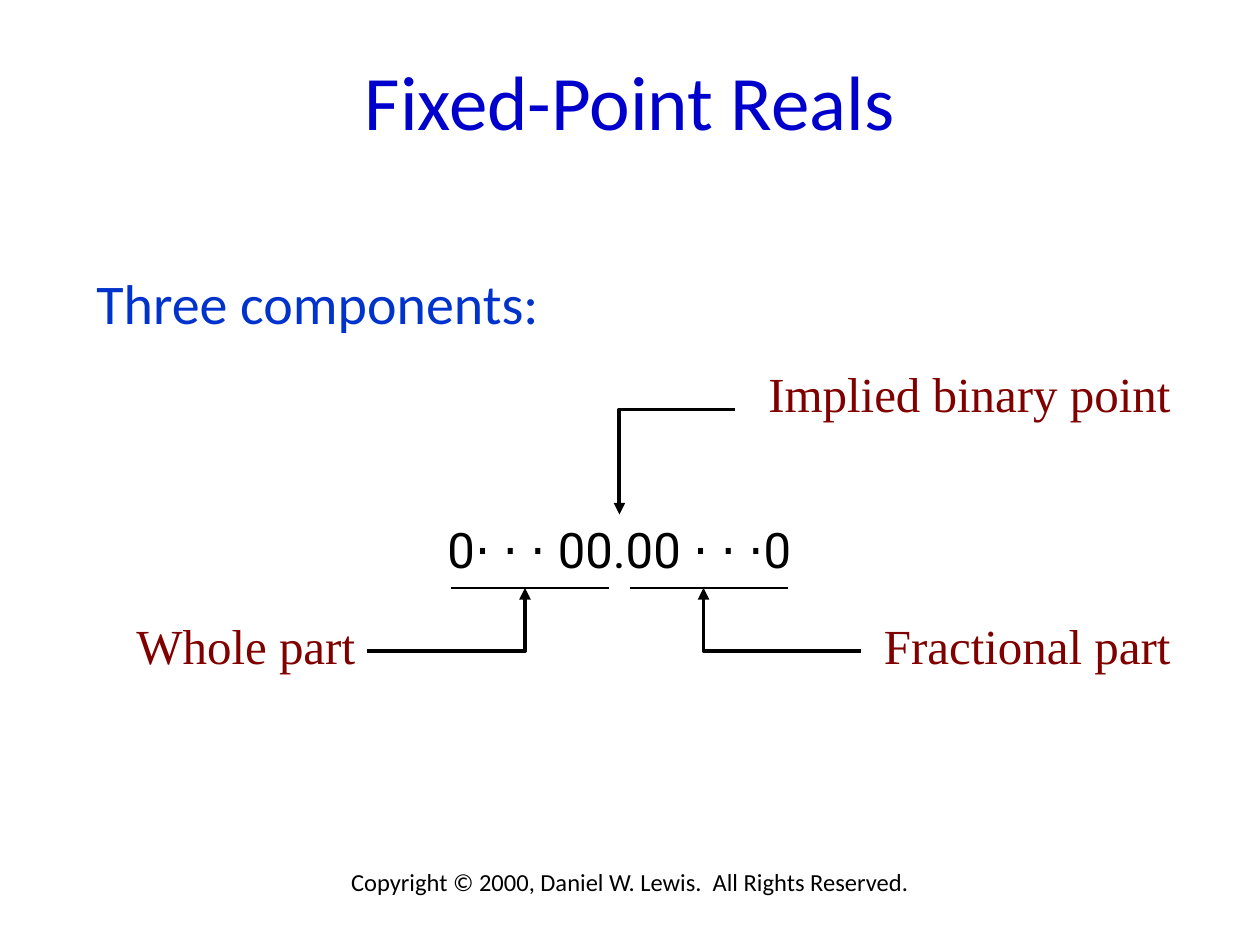
from dataclasses import dataclass

from lxml import etree
from pptx import Presentation, util as u
from pptx.dml.color import RGBColor
from pptx.enum import shapes, text
from pptx.oxml.ns import qn

COLS, ROWS = 120, 90  # grid over the slide, twelve cells to the inch


@dataclass(frozen=True)
class Style:
    font: str
    size: int
    color: str


THEME = {
    "title": Style("Calibri", 44, "0000CC"),
    "heading": Style("Calibri", 32, "0033CC"),
    "number": Style("Roboto", 28, "000000"),
    "label": Style("Times New Roman", 28, "800000"),
    "footer": Style("Calibri", 14, "000000"),
}
LINE_COLOR, THIN, THICK = "000000", 0.75, 2.25

LEFT, CENTER, RIGHT = text.PP_ALIGN.LEFT, text.PP_ALIGN.CENTER, text.PP_ALIGN.RIGHT
TOP, MIDDLE = text.MSO_ANCHOR.TOP, text.MSO_ANCHOR.MIDDLE

# wording, style, (column, row, columns, rows), alignment, anchor
TEXTS = [
    ("Copyright © 2000, Daniel W. Lewis.  All Rights Reserved.", "footer",
     (9, 82, 102, 6), CENTER, TOP),
    ("Fixed-Point Reals", "title", (9, 2, 102, 15), CENTER, MIDDLE),
    ("Three components:", "heading", (8, 25, 102, 8), LEFT, TOP),
    ("0⋅ ⋅ ⋅ 00.00 ⋅ ⋅ ⋅0", "number", (8, 49, 102, 6.6), CENTER, MIDDLE),
    ("Whole part", "label", (8, 58, 27, 6.8), RIGHT, TOP),
    ("Fractional part", "label", (83, 58, 32, 6.8), LEFT, TOP),
    ("Implied binary point", "label", (72, 34, 43, 6.8), LEFT, TOP),
]
UNDERLINE_ROW, UNDERLINES = 56, [(43, 58), (60, 75)]
# tip, corner, tail
ARROWS = [
    [(50, 56), (50, 62), (35, 62)],
    [(59, 49), (59, 39), (70, 39)],
    [(67, 56), (67, 62), (82, 62)],
]

prs = Presentation()
prs.slide_width, prs.slide_height = u.Inches(10), u.Inches(7.5)
s = prs.slides.add_slide(prs.slide_layouts[6])


def x(col):
    return round(prs.slide_width * col / COLS)


def y(row):
    return round(prs.slide_height * row / ROWS)


def add_text(words, style, box, align, anchor):
    col, row, cols, rows = box
    tf = s.shapes.add_textbox(x(col), y(row), x(cols), y(rows)).text_frame
    tf.word_wrap = True
    tf.vertical_anchor = anchor
    p = tf.paragraphs[0]
    p.alignment = align
    r = p.add_run()
    r.text = words
    look = THEME[style]
    r.font.name, r.font.size = look.font, u.Pt(look.size)
    r.font.color.rgb = RGBColor.from_string(look.color)


def set_line(sp, width):
    sp.line.color.rgb = RGBColor.from_string(LINE_COLOR)
    sp.line.width = u.Pt(width)


def add_underline(start, end):
    sp = s.shapes.add_connector(shapes.MSO_CONNECTOR.STRAIGHT,
                                x(start), y(UNDERLINE_ROW), x(end), y(UNDERLINE_ROW))
    set_line(sp, THIN)
    etree.SubElement(sp._element.spPr, qn("a:effectLst"))


def add_arrow(points):
    """Draw an open bent line with its arrowhead at the first point."""
    tip, *rest = [(x(col), y(row)) for col, row in points]
    builder = s.shapes.build_freeform(*tip)
    builder.add_line_segments(rest, close=False)
    sp = builder.convert_to_shape()
    sp.shadow.inherit = False
    sp.fill.background()
    set_line(sp, THICK)
    etree.SubElement(sp.line._get_or_add_ln(), qn("a:headEnd"), type="triangle")


for item in TEXTS:
    add_text(*item)
for span in UNDERLINES:
    add_underline(*span)
for points in ARROWS:
    add_arrow(points)

prs.save("out.pptx")
